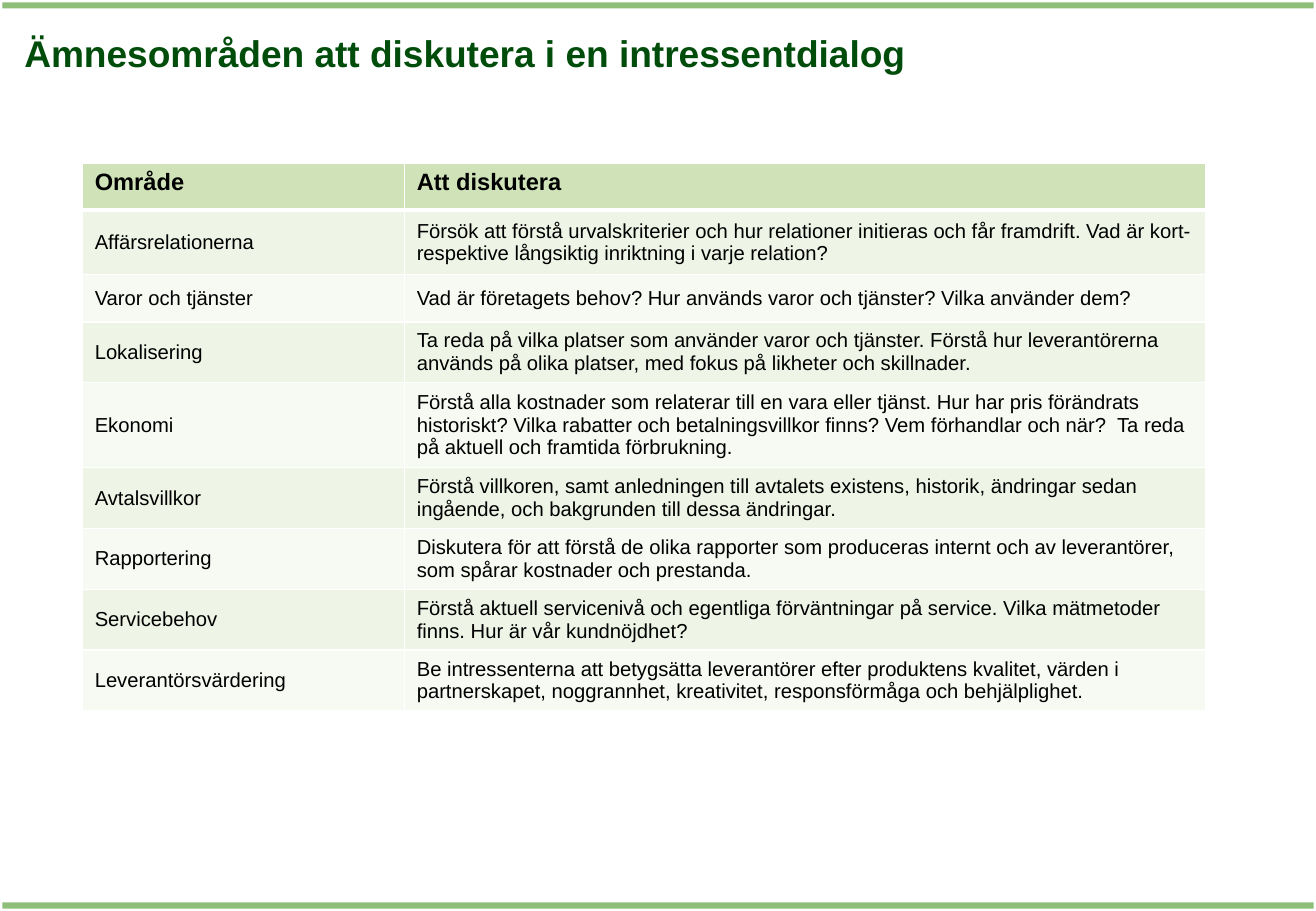
from lxml.etree import SubElement
from pptx import Presentation
from pptx.dml.color import RGBColor
from pptx.enum.shapes import MSO_SHAPE
from pptx.enum.text import MSO_ANCHOR, PP_ALIGN
from pptx.oxml.ns import qn
from pptx.util import Inches, Pt

COLORS = {
    "bar": "8EBE78",
    "title": "004D0B",
    "text": "000000",
    "border": "FFFFFF",
    "header": "D0E3B8",
    "odd": "EEF4E6",
    "even": "F7FAF3",
}

# Row height in inches, area, topics
ROWS = [
    (0.39, "Område", "Att diskutera"),
    (0.53, "Affärsrelationerna",
     "Försök att förstå urvalskriterier och hur relationer initieras och får framdrift. "
     "Vad är kort- respektive långsiktig inriktning i varje relation?"),
    (0.39, "Varor och tjänster",
     "Vad är företagets behov? Hur används varor och tjänster? Vilka använder dem?"),
    (0.47, "Lokalisering",
     "Ta reda på vilka platser som använder varor och tjänster. Förstå hur leverantörerna "
     "används på olika platser, med fokus på likheter och skillnader."),
    (0.66, "Ekonomi",
     "Förstå alla kostnader som relaterar till en vara eller tjänst. Hur har pris förändrats "
     "historiskt? Vilka rabatter och betalningsvillkor finns? Vem förhandlar och när?  "
     "Ta reda på aktuell och framtida förbrukning."),
    (0.47, "Avtalsvillkor",
     "Förstå villkoren, samt anledningen till avtalets existens, historik, ändringar sedan "
     "ingående, och bakgrunden till dessa ändringar."),
    (0.47, "Rapportering",
     "Diskutera för att förstå de olika rapporter som produceras internt och av "
     "leverantörer, som spårar kostnader och prestanda."),
    (0.47, "Servicebehov",
     "Förstå aktuell servicenivå och egentliga förväntningar på service. Vilka mätmetoder "
     "finns. Hur är vår kundnöjdhet?"),
    (0.47, "Leverantörsvärdering",
     "Be intressenterna att betygsätta leverantörer efter produktens kvalitet, värden i "
     "partnerskapet, noggrannhet, kreativitet, responsförmåga och behjälplighet."),
]


def write(frame, text, size, color, bold):
    para = frame.paragraphs[0]
    para.text = text
    para.alignment = PP_ALIGN.LEFT
    font = para.runs[0].font
    font.name = "Arial"
    font.size = Pt(size)
    font.bold = bold
    font.color.rgb = RGBColor.from_string(COLORS[color])


def add_border(cell, side, width):
    line = SubElement(cell._tc.get_or_add_tcPr(), qn("a:" + side), w=str(Pt(width)))
    fill = SubElement(line, qn("a:solidFill"))
    SubElement(fill, qn("a:srgbClr"), val=COLORS["border"])


deck = Presentation()
deck.slide_width = Inches(10.83)
deck.slide_height = Inches(7.5)
page = deck.slides.add_slide(deck.slide_layouts[6])

# Bars along the top and bottom edges
for top in (0.02, 7.43):
    bar = page.shapes.add_shape(
        MSO_SHAPE.RECTANGLE, Inches(0.02), Inches(top), Inches(10.79), Inches(0.05))
    bar.shadow.inherit = False
    bar.fill.solid()
    bar.fill.fore_color.rgb = RGBColor.from_string(COLORS["bar"])
    bar.line.fill.background()

# Title
box = page.shapes.add_textbox(Inches(0.14), Inches(0.21), Inches(10.55), Inches(0.88))
frame = box.text_frame
frame.word_wrap = True
frame.margin_left = frame.margin_right = Inches(0.06)
frame.margin_top = frame.margin_bottom = Inches(0.04)
write(frame, "Ämnesområden att diskutera i en intressentdialog", 22, "title", True)

# Table of areas and topics
table_height = sum(height for height, *_ in ROWS)
table = page.shapes.add_table(
    len(ROWS), 2, Inches(0.68), Inches(1.34), Inches(9.24), Inches(table_height)).table
table.columns[0].width = Inches(2.65)
table.columns[1].width = Inches(6.59)

for row_index, (height, *texts) in enumerate(ROWS):
    is_header = row_index == 0
    table.rows[row_index].height = Inches(height)
    fill_name = "header" if is_header else "odd" if row_index % 2 else "even"
    for column_index, text in enumerate(texts):
        cell = table.cell(row_index, column_index)
        cell.vertical_anchor = MSO_ANCHOR.TOP if is_header else MSO_ANCHOR.MIDDLE
        write(cell.text_frame, text, 14 if is_header else 12, "text", is_header)
        # The rule below the header is thicker
        add_border(cell, "lnL", 1)
        add_border(cell, "lnR", 1)
        add_border(cell, "lnT", 3 if row_index == 1 else 1)
        add_border(cell, "lnB", 3 if is_header else 1)
        cell.fill.solid()
        cell.fill.fore_color.rgb = RGBColor.from_string(COLORS[fill_name])

deck.save("out.pptx")
